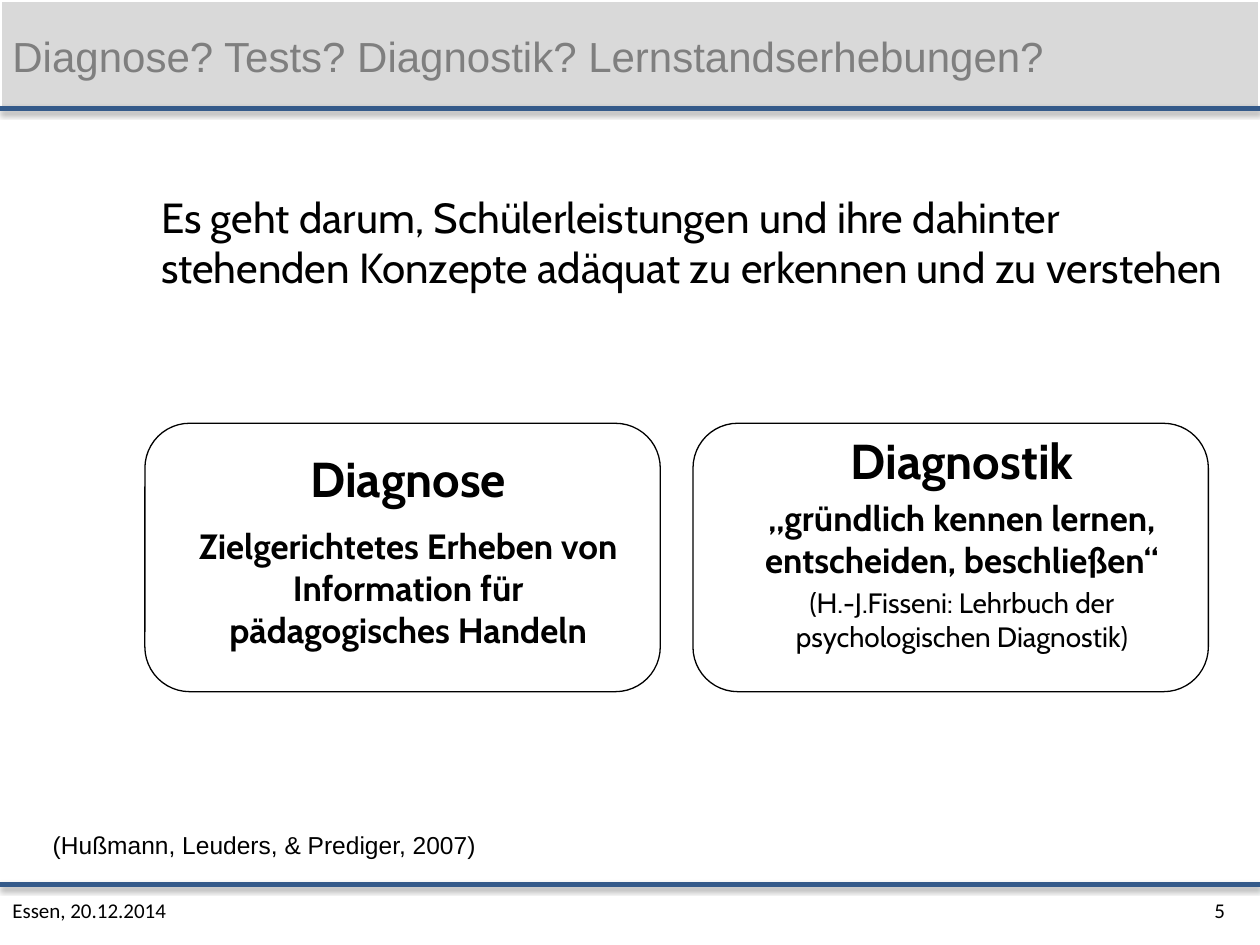
import pptx
import pptx.util
import pptx.oxml
import pptx.oxml.ns
from pptx.dml.color import RGBColor
from pptx.enum.shapes import MSO_CONNECTOR, MSO_SHAPE
from pptx.enum.text import MSO_ANCHOR, PP_ALIGN

Inches, Pt = pptx.util.Inches, pptx.util.Pt
BLACK = RGBColor(0x00, 0x00, 0x00)
WHITE = RGBColor(0xFF, 0xFF, 0xFF)
GRAY = RGBColor(0x7F, 0x7F, 0x7F)
LIGHT = RGBColor(0xD9, 0xD9, 0xD9)
BLUE = RGBColor(0x34, 0x5A, 0x8A)
WIDTH, HEIGHT = Inches(10), Inches(7.5)
SHADOW = (
    f'<a:effectLst {pptx.oxml.ns.nsdecls("a")}>'
    '<a:outerShdw blurRad="39370" dist="20320" dir="5400000" rotWithShape="0">'
    '<a:srgbClr val="000000"><a:alpha val="38000"/></a:srgbClr>'
    '</a:outerShdw></a:effectLst>'
)


def add_text(slide, box, items, font, color=BLACK, align=PP_ALIGN.LEFT, anchor=MSO_ANCHOR.TOP):
    """Add a text box; items are (text, size, bold, space before)."""
    frame = slide.shapes.add_textbox(*box).text_frame
    frame.word_wrap = True
    frame.vertical_anchor = anchor
    for index, (text, size, bold, space) in enumerate(items):
        para = frame.paragraphs[0] if index == 0 else frame.add_paragraph()
        para.text = text
        para.alignment = align
        para.space_before = Pt(space)
        para.font.name = font
        para.font.size = Pt(size)
        para.font.bold = bold
        para.font.color.rgb = color


def add_rule(slide, top):
    """Draw a blue rule with a soft shadow across the slide."""
    rule = slide.shapes.add_connector(MSO_CONNECTOR.STRAIGHT, 0, top, WIDTH, top)
    rule.line.color.rgb = BLUE
    rule.line.width = Pt(3)
    rule._element.spPr.append(pptx.oxml.parse_xml(SHADOW))


def add_header(slide, left, top, width, height):
    """Draw the title band with its rule."""
    band = slide.shapes.add_shape(MSO_SHAPE.RECTANGLE, left, top, width, height)
    band.shadow.inherit = False
    band.fill.solid()
    band.fill.fore_color.rgb = LIGHT
    band.line.color.rgb = WHITE
    band.line.width = Pt(2)
    add_rule(slide, top + height - Inches(0.01))
    title = "Diagnose? Tests? Diagnostik? Lernstandserhebungen?"
    box = (left, top + Inches(0.03), Inches(9.21), height - Inches(0.04))
    add_text(slide, box, [(title, 24, False, 0)], "Arial", GRAY, anchor=MSO_ANCHOR.MIDDLE)


def add_footer(slide, left, top, width, height):
    """Draw the rule, the place with date, and the page number."""
    add_rule(slide, top)
    page = (left + width - Inches(0.78), top, Inches(0.6), height)
    for box, text, align in (
        ((left, top, width, height), "Essen, 20.12.2014", PP_ALIGN.LEFT),
        (page, "5", PP_ALIGN.RIGHT),
    ):
        add_text(slide, box, [(text, 12, False, 0)], "Calibri", align=align, anchor=MSO_ANCHOR.MIDDLE)


def add_card(slide, left, top, width, height, inset, items):
    """Draw a rounded card with text placed by inset (left, top, width, height)."""
    card = slide.shapes.add_shape(MSO_SHAPE.ROUNDED_RECTANGLE, left, top, width, height)
    card.shadow.inherit = False
    card.fill.background()
    card.line.color.rgb = BLACK
    card.line.width = Pt(0.75)
    shift, drop, wide, high = map(Inches, inset)
    add_text(slide, (left + shift, top + drop, wide, high), items, "Cabin", align=PP_ALIGN.CENTER)


def main():
    """Build and save the slide."""
    deck = pptx.Presentation()
    deck.slide_width, deck.slide_height = WIDTH, HEIGHT
    slide = deck.slides.add_slide(deck.slide_layouts[6])
    add_header(slide, 0, 0, WIDTH, Inches(0.87))
    add_footer(slide, 0, Inches(7.02), WIDTH, Inches(0.4))

    lead = (
        "Es geht darum, Schülerleistungen und ihre dahinter "
        "stehenden Konzepte adäquat zu erkennen und zu verstehen"
    )
    box = tuple(map(Inches, (1.18, 1.47, 8.82, 1.31)))
    add_text(slide, box, [(lead, 24, False, 0)], "Cabin")

    cards = (
        ((0.24, 0.15, 3.7, 1.73), [
            ("Diagnose", 28, True, 0),
            ("Zielgerichtetes Erheben von Information für pädagogisches Handeln", 20, True, 10),
        ]),
        ((-0.23, 0.01, 4.73, 1.89), [
            ("Diagnostik", 28, True, 0),
            ("„gründlich kennen lernen, entscheiden, beschließen“", 20, True, 4),
            ("(H.-J.Fisseni: Lehrbuch der\vpsychologischen Diagnostik)", 16, False, 3),
        ]),
    )
    for index, (inset, items) in enumerate(cards):
        left = Inches(1.15 + index * 4.35)
        add_card(slide, left, Inches(3.36), Inches(4.09), Inches(2.13), inset, items)

    source = "(Hußmann, Leuders, & Prediger, 2007)"
    box = tuple(map(Inches, (0.32, 6.54, 4.25, 0.34)))
    add_text(slide, box, [(source, 14, False, 0)], "Arial")
    deck.save("out.pptx")


if __name__ == "__main__":
    main()
